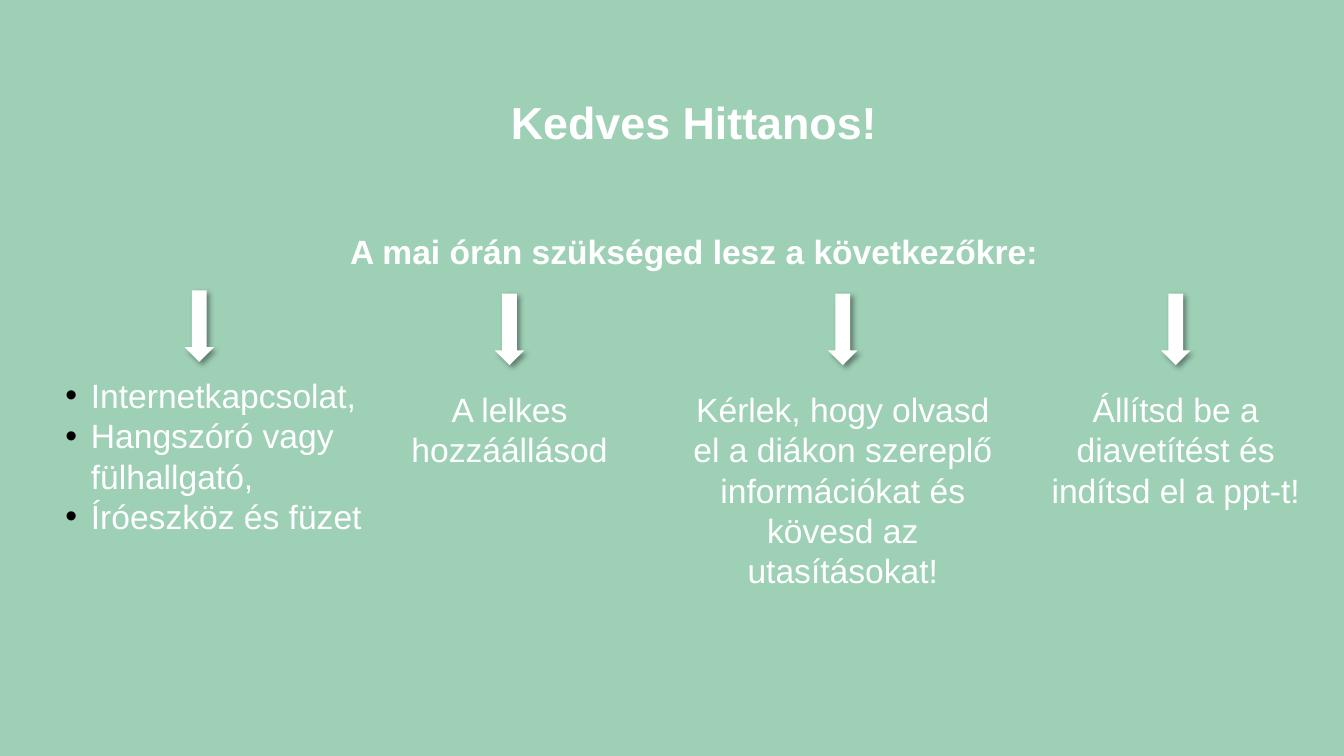
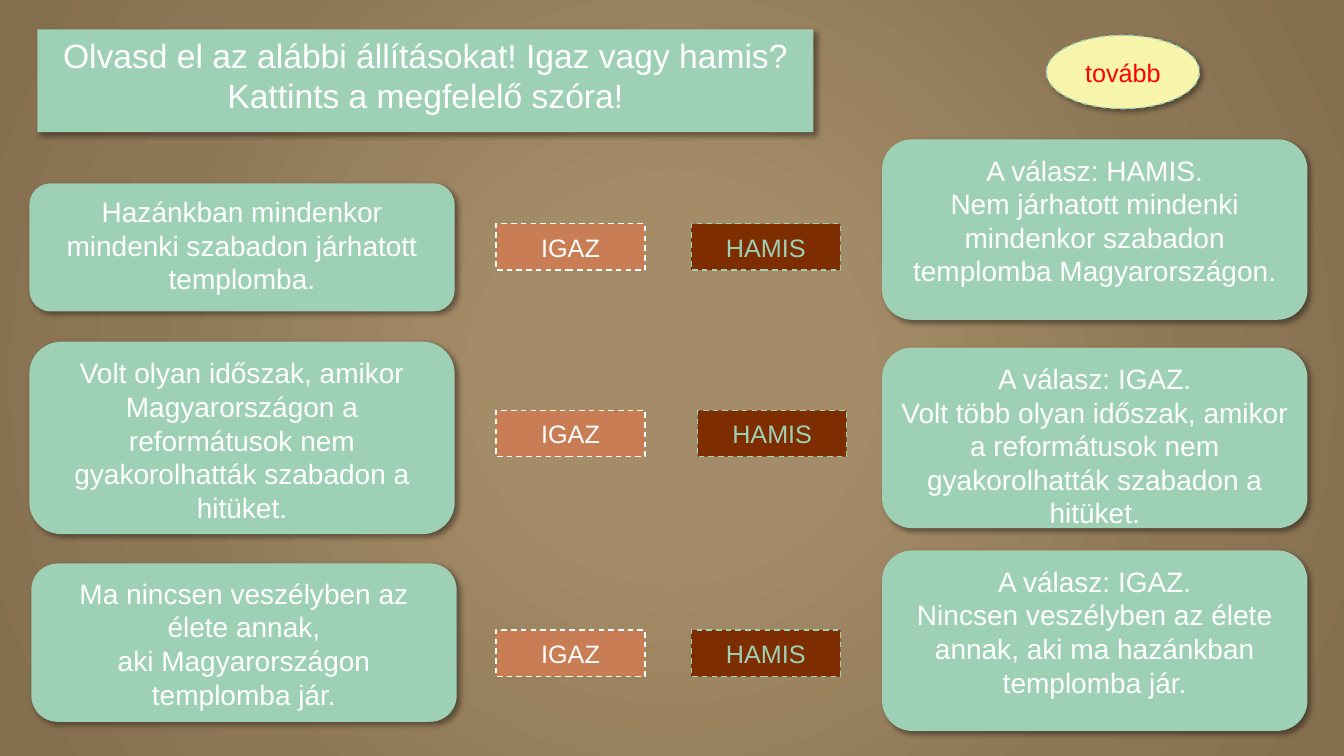
from pptx import Presentation
from pptx.dml.color import RGBColor
from pptx.enum import dml, shapes, text
from pptx.oxml import parse_xml
from pptx.oxml.ns import nsdecls, qn
from pptx.util import Cm, Pt

COLORS = {"mint": "9ED0B6", "white": "FFFFFF", "black": "000000", "orange": "C87D54",
          "brown": "7E2D00", "cream": "F7F5AC", "red": "FF0000"}
BACKDROP = [(0, "A58C68"), (23, "A58C68"), (69, "8E7755"), (97, "846F4F")]
FONT = "Arial"
SHAPE = shapes.MSO_SHAPE

WELCOME = "Kedves Hittanos!"
NEEDS = "A mai órán szükséged lesz a következőkre:"
TOOLS = ["Internetkapcsolat,", "Hangszóró vagy fülhallgató,", "Íróeszköz és füzet"]
# left, width, height, text
COLUMNS = [
    (9.4, 6.88, 3.18, "A lelkes hozzáállásod"),
    (17.2, 8.08, 8.3, "Kérlek, hogy olvasd el a diákon szereplő információkat és kövesd az utasításokat!"),
    (26.19, 6.88, 3.18, "Állítsd be a diavetítést és indítsd el a ppt-t!"),
]
TASK = "Olvasd el az alábbi állításokat! Igaz vagy hamis? Kattints a megfelelő szóra!"
# statement box and lines, button top, left of HAMIS, answer top and lines
QUIZ = [
    ((0.74, 4.62, 10.72, 3.23), ["Hazánkban mindenkor mindenki szabadon járhatott templomba."],
     5.64, 17.42, 3.51,
     ["A válasz: HAMIS.", "Nem járhatott mindenki mindenkor szabadon templomba Magyarországon."]),
    ((0.74, 8.61, 10.72, 4.85),
     ["Volt olyan időszak, amikor Magyarországon a reformátusok nem gyakorolhatták szabadon a hitüket."],
     10.34, 17.58, 8.76,
     ["A válasz: IGAZ.",
      "Volt több olyan időszak, amikor a reformátusok nem gyakorolhatták szabadon a hitüket."]),
    ((0.79, 14.2, 10.72, 3.99),
     ["Ma nincsen veszélyben az élete annak,", "aki Magyarországon templomba jár."],
     15.88, 17.42, 13.87,
     ["A válasz: IGAZ.", "Nincsen veszélyben az élete annak, aki ma hazánkban templomba jár."]),
]


def rgb(name):
    return RGBColor.from_string(COLORS[name])


def place(sp, box):
    for side, value in zip(("left", "top", "width", "height"), box):
        setattr(sp, side, Cm(value))


def write(sp, lines, size, color="white", bold=False, align="CENTER", anchor="TOP", inset=True):
    tf = sp.text_frame
    tf.word_wrap = True
    tf.auto_size = text.MSO_AUTO_SIZE.NONE
    tf.vertical_anchor = text.MSO_ANCHOR[anchor]
    if not inset:
        for side in ("left", "top", "right", "bottom"):
            setattr(tf, f"margin_{side}", 0)
    for i, line in enumerate(lines):
        p = tf.add_paragraph() if i else tf.paragraphs[0]
        form = {"alignment": text.PP_ALIGN[align], "line_spacing": 1.0,
                "space_before": Pt(0), "space_after": Pt(0)}
        for key, value in form.items():
            setattr(p, key, value)
        r = p.add_run()
        r.text = line
        for key, value in {"name": FONT, "size": Pt(size), "bold": bold}.items():
            setattr(r.font, key, value)
        r.font.color.rgb = rgb(color)


def paint(sp, fill, line=None, shadow=True):
    sp.fill.solid()
    sp.fill.fore_color.rgb = rgb(fill)
    if line:
        sp.line.color.rgb = rgb(line)
        sp.line.width = Pt(1)
        sp.line.dash_style = dml.MSO_LINE.DASH
    else:
        sp.line.fill.background()
    sp.shadow.inherit = False
    if shadow:
        sp.element.spPr.find(qn("a:effectLst")).append(parse_xml(
            f'<a:outerShdw {nsdecls("a")} blurRad="50800" dist="38100" dir="2700000" algn="tl" '
            f'rotWithShape="0"><a:srgbClr val="{COLORS["black"]}"><a:alpha val="40000"/>'
            '</a:srgbClr></a:outerShdw>'))


def add_shape(s, kind, box, fill, line=None, shadow=True):
    sp = s.shapes.add_shape(kind, *map(Cm, box))
    paint(sp, fill, line, shadow)
    return sp


def add_text(s, box, lines, size, **style):
    write(s.shapes.add_textbox(*map(Cm, box)), lines, size, **style)


def add_bullets(sp):
    for p in sp.text_frame.paragraphs:
        pPr = p._p.get_or_add_pPr()
        pPr.set("marL", str(Cm(0.64)))
        pPr.set("indent", str(-Cm(0.64)))
        for xml in (f'<a:buClr {nsdecls("a")}><a:srgbClr val="{COLORS["black"]}"/></a:buClr>',
                    f'<a:buFont {nsdecls("a")} typeface="{FONT}"/>',
                    f'<a:buChar {nsdecls("a")} char="•"/>'):
            pPr.append(parse_xml(xml))


def set_radial_background(s):
    s.background.fill.solid()
    stops = "".join(f'<a:gs pos="{pos * 1000}"><a:srgbClr val="{color}"/></a:gs>'
                    for pos, color in BACKDROP)
    bgPr = s.element.find(f".//{qn('p:bgPr')}")
    bgPr.replace(bgPr[0], parse_xml(
        f'<a:gradFill {nsdecls("a")} rotWithShape="1"><a:gsLst>{stops}</a:gsLst>'
        '<a:path path="circle"><a:fillToRect l="50000" t="50000" r="50000" b="50000"/></a:path>'
        '</a:gradFill>'))


def build_welcome(prs):
    s = prs.slides.add_slide(prs.slide_layouts[1])
    s.background.fill.solid()
    s.background.fill.fore_color.rgb = rgb("mint")
    title, tools = s.placeholders
    place(title, (4.65, 2.39, 25.68, 1.8))
    write(title, [WELCOME], 32, bold=True, inset=False)
    place(tools, (1.65, 9.45, 8.08, 4.34))
    write(tools, TOOLS, 24, align="LEFT", inset=False)
    add_bullets(tools)
    add_text(s, (8.46, 5.69, 18.06, 1.27), [NEEDS], 24, bold=True)
    arrows = [(5.02, 7.32)]
    for left, width, height, line in COLUMNS:
        add_text(s, (left, 9.8, width, height), [line], 24, inset=False)
        arrows.append((left + width / 2, 7.4))
    for center, top in arrows:
        add_shape(s, SHAPE.DOWN_ARROW, (center - 0.37, top, 0.74, 1.8), "white")


def build_quiz(prs):
    s = prs.slides.add_slide(prs.slide_layouts[5])
    set_radial_background(s)
    title = s.shapes.title
    place(title, (0.94, 0.74, 19.56, 2.59))
    paint(title, "mint")
    write(title, [TASK], 24)
    for box, statement, button_top, false_left, answer_top, answer in QUIZ:
        for card, lines in ((box, statement), ((22.23, answer_top, 10.72, 4.55), answer)):
            write(add_shape(s, SHAPE.ROUNDED_RECTANGLE, card, "mint"), lines, 20)
        for left, word, fill, ink in ((12.5, "IGAZ", "orange", "white"),
                                      (false_left, "HAMIS", "brown", "mint")):
            button = add_shape(s, SHAPE.RECTANGLE, (left, button_top, 3.76, 1.17),
                               fill, ink, shadow=False)
            write(button, [word], 18, ink, anchor="MIDDLE")
    next_button = add_shape(s, SHAPE.OVAL, (26.37, 0.89, 3.86, 1.85), "cream", "mint")
    write(next_button, ["tovább"], 18, "red", anchor="MIDDLE")


def main():
    prs = Presentation()
    prs.slide_width, prs.slide_height = Cm(33.87), Cm(19.05)
    build_welcome(prs)
    build_quiz(prs)
    prs.save("out.pptx")


if __name__ == "__main__":
    main()
